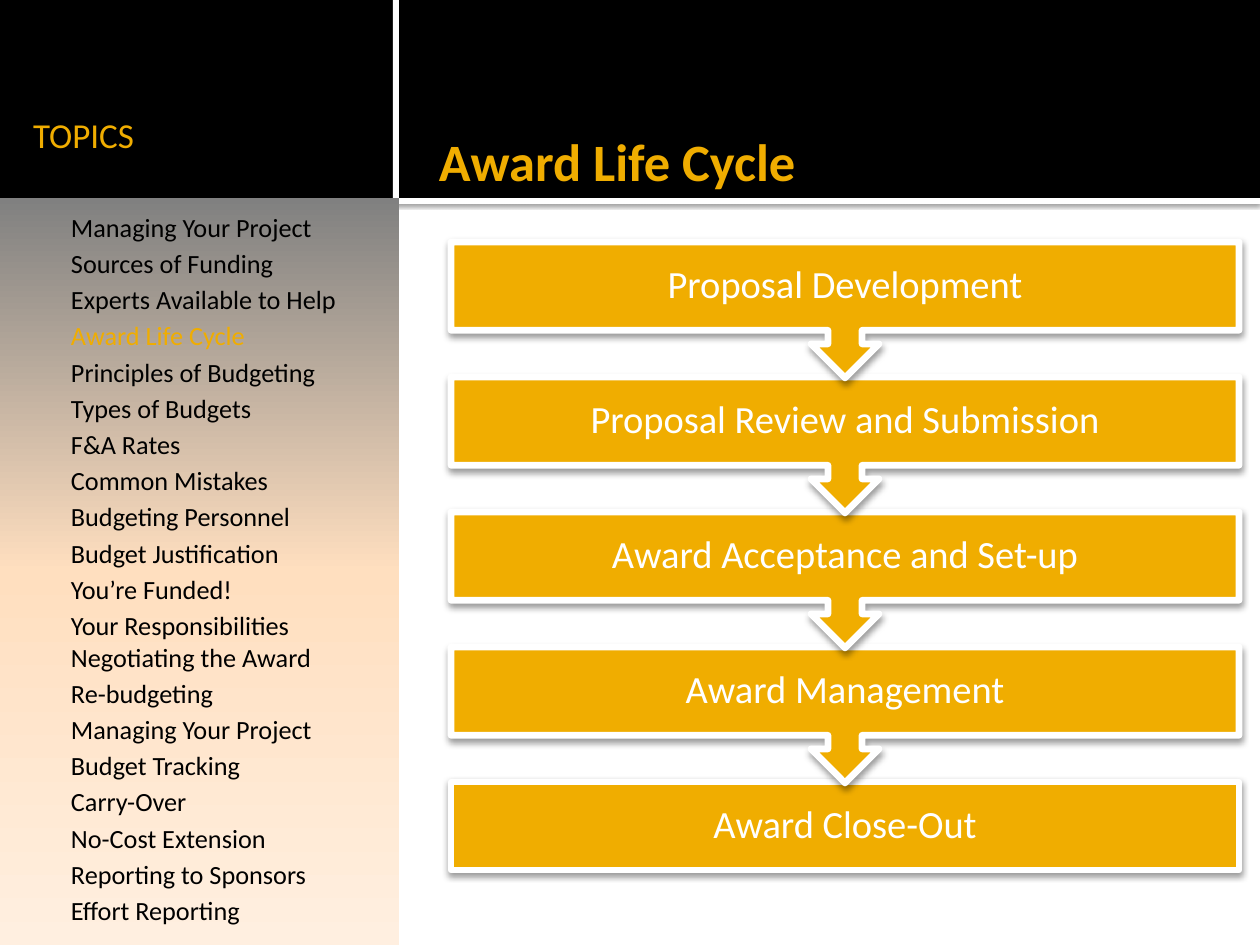
from dataclasses import dataclass
from typing import Optional

from lxml import etree
from pptx import Presentation
from pptx.dml.color import RGBColor
from pptx.enum.shapes import MSO_SHAPE
from pptx.enum.text import MSO_ANCHOR, PP_ALIGN
from pptx.oxml import parse_xml
from pptx.oxml.ns import qn
from pptx.util import Emu, Pt

RECT, CALLOUT = MSO_SHAPE.RECTANGLE, MSO_SHAPE.DOWN_ARROW_CALLOUT
TOP, MIDDLE, BOTTOM = MSO_ANCHOR.TOP, MSO_ANCHOR.MIDDLE, MSO_ANCHOR.BOTTOM
LEFT, CENTER = PP_ALIGN.LEFT, PP_ALIGN.CENTER
SCALE = 914400 / 126
NS = "http://schemas.openxmlformats.org/drawingml/2006/main"
COLORS = {"gold": "F0AD00", "black": "000000", "white": "FFFFFF",
          "gray": "808080", "peach": "FFDFBF", "cream": "FFEFE0"}
SIDEBAR_STOPS = ((0, "gray"), (50, "peach"), (100, "cream"))
TOPICS = ["Managing Your Project", "Sources of Funding", "Experts Available to Help",
          "Award Life Cycle", "Principles of Budgeting", "Types of Budgets", "F&A Rates",
          "Common Mistakes", "Budgeting Personnel", "Budget Justification", "You’re Funded!",
          "Your Responsibilities Negotiating the Award", "Re-budgeting",
          "Managing Your Project", "Budget Tracking", "Carry-Over", "No-Cost Extension",
          "Reporting to Sponsors", "Effort Reporting"]
CURRENT_TOPIC = "Award Life Cycle"
STAGES = ["Proposal Development", "Proposal Review and Submission",
          "Award Acceptance and Set-up", "Award Management", "Award Close-Out"]
STAGE_TOP, STAGE_PITCH, STAGE_HEIGHT, CALLOUT_HEIGHT = 242, 135, 88, 136


@dataclass
class Box:
    x: int
    y: int
    w: int
    h: int


@dataclass
class Shadow:
    blur: float
    dist: float
    alpha: int


@dataclass
class TextStyle:
    size: int
    color: str
    insets: tuple[int, int, int, int]
    anchor: int = TOP
    align: int = LEFT
    bold: bool = False
    indent: int = 0
    before: float = 0
    spacing: float = 1.0


RULE_SHADOW = Shadow(2.5, 0.8, 60)
STAGE_SHADOW = Shadow(3.5, 2, 38)
HEADING = TextStyle(20, "gold", (10, 6, 6, 0), anchor=BOTTOM)
TITLE = TextStyle(30, "gold", (8, 0, 13, 6), anchor=BOTTOM, bold=True)
TOPIC = TextStyle(15, "black", (8, 13, 13, 6), indent=63, before=2.7)
STAGE = TextStyle(22, "white", (21, 21, 21, 21), anchor=MIDDLE, align=CENTER, spacing=0.9)


def px(n: int) -> Emu:
    return Emu(round(n * SCALE))


def bounds(box: Box) -> list[Emu]:
    return [px(n) for n in (box.x, box.y, box.w, box.h)]


def rgb(name: str) -> RGBColor:
    return RGBColor.from_string(COLORS[name])


def set_format(target: object, values: dict) -> None:
    for name, value in values.items():
        setattr(target, name, value)


def add_shadow(sp, shadow: Shadow) -> None:
    effects = sp._element.spPr.find(qn("a:effectLst"))
    outer = etree.SubElement(effects, qn("a:outerShdw"), blurRad=str(Pt(shadow.blur)),
                             dist=str(Pt(shadow.dist)), dir="5400000", rotWithShape="0")
    color = etree.SubElement(outer, qn("a:srgbClr"), val=COLORS["black"])
    etree.SubElement(color, qn("a:alpha"), val=str(shadow.alpha * 1000))


def add_block(s, box: Box, fill: str, kind: int = RECT, line: Optional[str] = None,
              shadow: Optional[Shadow] = None):
    sp = s.shapes.add_shape(kind, *bounds(box))
    sp.shadow.inherit = False
    sp.fill.solid()
    sp.fill.fore_color.rgb = rgb(fill)
    if line:
        sp.line.color.rgb = rgb(line)
        sp.line.width = Pt(3.82)
    else:
        sp.line.fill.background()
    if shadow:
        add_shadow(sp, shadow)
    return sp


def set_gradient(sp, stops: tuple) -> None:
    marks = "".join(f'<a:gs pos="{pos * 1000}"><a:srgbClr val="{COLORS[name]}"/></a:gs>'
                    for pos, name in stops)
    grad = parse_xml(f'<a:gradFill xmlns:a="{NS}" rotWithShape="1"><a:gsLst>{marks}</a:gsLst>'
                     '<a:lin ang="5400000" scaled="0"/></a:gradFill>')
    spPr = sp._element.spPr
    spPr.replace(spPr.find(qn("a:solidFill")), grad)


def write(sp, lines: list[str], style: TextStyle, highlight: str = "") -> None:
    tf = sp.text_frame
    left, top, right, bottom = (px(n) for n in style.insets)
    set_format(tf, {"word_wrap": True, "vertical_anchor": style.anchor, "margin_left": left,
                    "margin_top": top, "margin_right": right, "margin_bottom": bottom})
    for i, line in enumerate(lines):
        p = tf.add_paragraph() if i else tf.paragraphs[0]
        set_format(p, {"alignment": style.align, "line_spacing": style.spacing,
                       "space_before": Pt(style.before)})
        p._p.get_or_add_pPr().set("marL", str(px(style.indent)))
        r = p.add_run()
        r.text = line
        set_format(r.font, {"name": "Calibri", "size": Pt(style.size), "bold": style.bold})
        r.font.color.rgb = rgb("gold" if line == highlight else style.color)


def add_text(s, box: Box, text: str, style: TextStyle) -> None:
    write(s.shapes.add_textbox(*bounds(box)), [text], style)


def add_stages(s) -> None:
    last = len(STAGES) - 1
    for i in range(last, -1, -1):
        kind, height = (RECT, STAGE_HEIGHT) if i == last else (CALLOUT, CALLOUT_HEIGHT)
        box = Box(451, STAGE_TOP + i * STAGE_PITCH, 788, height)
        write(add_block(s, box, "gold", kind, "white", STAGE_SHADOW), [STAGES[i]], STAGE)


def main() -> None:
    """Build the award life cycle slide."""
    prs = Presentation()
    set_format(prs, {"slide_width": px(1260), "slide_height": px(945)})
    s = prs.slides.add_slide(prs.slide_layouts[6])
    add_block(s, Box(0, 198, 1260, 6), "white", shadow=RULE_SHADOW)
    add_block(s, Box(0, 0, 1260, 198), "black")
    add_block(s, Box(393, 0, 6, 200), "white")
    add_text(s, Box(23, 21, 348, 135), "TOPICS", HEADING)
    add_text(s, Box(431, 114, 766, 84), "Award Life Cycle", TITLE)
    add_stages(s)
    sidebar = add_block(s, Box(0, 198, 399, 747), "gray")
    set_gradient(sidebar, SIDEBAR_STOPS)
    write(sidebar, TOPICS, TOPIC, highlight=CURRENT_TOPIC)
    prs.save("out.pptx")


if __name__ == "__main__":
    main()
